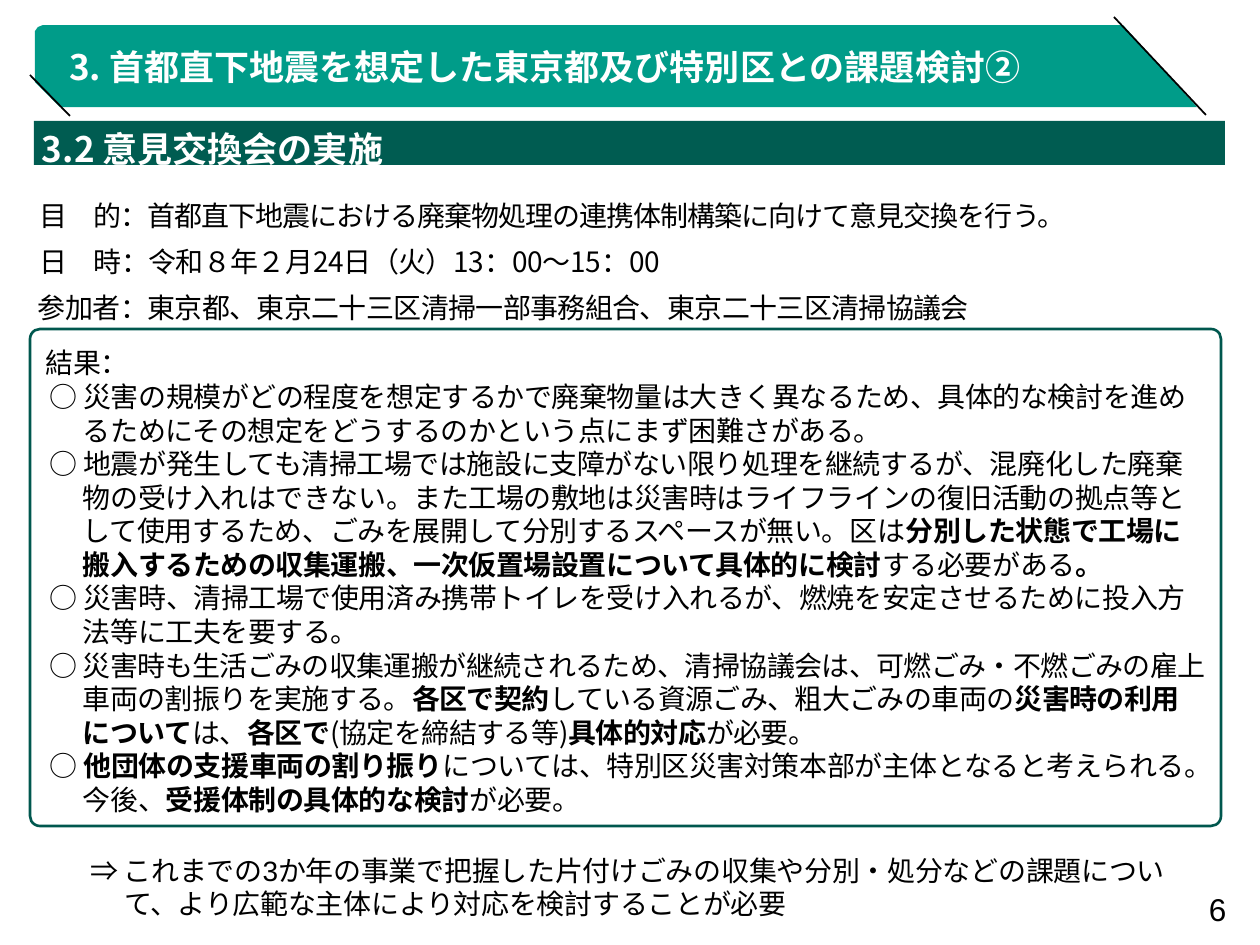
from lxml.etree import SubElement
from pptx import Presentation
from pptx.dml.color import RGBColor
from pptx.enum.shapes import MSO_CONNECTOR, MSO_SHAPE
from pptx.enum.text import MSO_ANCHOR, MSO_AUTO_SIZE, PP_ALIGN
from pptx.oxml.ns import qn
from pptx.util import Pt

HUE = {name: RGBColor.from_string(code) for name, code in {
    "teal": "009C89", "dark": "005C51", "edge": "00574E",
    "black": "000000", "white": "FFFFFF"}.items()}
CJK = "Noto Sans CJK JP"


def px(n):
    return round(n * 914400 / 126)


def write(shape, rows, pads, size=16, hue="black", face=CJK, bold=False,
          anchor=MSO_ANCHOR.TOP, lead=Pt(19.2), gap=0):
    """Fill a shape with rows of (text, margin, indent, tracking); | toggles bold."""
    frame = shape.text_frame
    frame.word_wrap = True
    frame.auto_size = MSO_AUTO_SIZE.NONE
    frame.vertical_anchor = anchor
    frame.margin_left, frame.margin_top, frame.margin_right = map(px, pads)
    frame.margin_bottom = 0
    for i, (text, left, hang, track) in enumerate(rows):
        para = frame.add_paragraph() if i else frame.paragraphs[0]
        para.alignment = PP_ALIGN.LEFT
        para.line_spacing = lead
        para.space_before = Pt(gap if i else 0)
        props = para._p.get_or_add_pPr()
        props.set("marL", str(px(left)))
        props.set("indent", str(px(hang)))
        for j, part in enumerate(text.split("|")):
            if not part:
                continue
            run = para.add_run()
            run.text = part
            font = run.font
            font.size = Pt(size)
            font.bold = bold or j % 2 == 1
            font.color.rgb = HUE[hue]
            font.name = face
            mark = run._r.get_or_add_rPr()
            mark.set("spc", str(track))
            SubElement(mark, qn("a:ea")).set("typeface", CJK)


deck = Presentation()
deck.slide_width, deck.slide_height = px(1260), px(945)
slide = deck.slides.add_slide(deck.slide_layouts[5])
shapes = slide.shapes
title = shapes.title

# Header band with two slanted lines
pen = shapes.build_freeform(60, 107, scale=px(1))
pen.add_line_segments([(35, 82), (35, 31), (38, 27), (43, 25),
                       (1123, 25), (1197, 107)])
band = pen.convert_to_shape()
band.shadow.inherit = False
band.fill.solid()
band.fill.fore_color.rgb = HUE["teal"]
band.line.fill.background()

for ends in [(1114, 17, 1206, 115), (30, 75, 70, 116)]:
    slash = shapes.add_connector(MSO_CONNECTOR.STRAIGHT, *map(px, ends))
    slash.line.color.rgb = HUE["black"]
    slash.line.width = Pt(1)
    SubElement(slash._element.spPr, qn("a:effectLst"))

# Title, moved in front of the band
title.left, title.top, title.width, title.height = map(px, (34, 26, 1079, 81))
shapes._spTree.append(title._element)
write(title, [("3. 首都直下地震を想定した東京都及び特別区との課題検討②", 0, 0, 0)],
      (35, 5, 0), size=20, hue="white", bold=True,
      anchor=MSO_ANCHOR.MIDDLE, lead=0.9)

# Section bar
bar = shapes.add_shape(MSO_SHAPE.RECTANGLE, *map(px, (34, 121, 1191, 44)))
bar.shadow.inherit = False
bar.fill.solid()
bar.fill.fore_color.rgb = HUE["dark"]
bar.line.fill.background()
write(bar, [("3.2 意見交換会の実施", 0, 0, 0)], (8, 10, 0), size=20,
      hue="white", bold=True, anchor=MSO_ANCHOR.MIDDLE, lead=1.0)

# Meeting facts
facts = shapes.add_textbox(*map(px, (38, 184, 1191, 140)))
write(facts, [
    ("目　的：首都直下地震における廃棄物処理の連携体制構築に向けて意見交換を行う。",
     111, -110, -50),
    ("日　時：令和８年２月24日（火）13：00～15：00", 111, -110, -30),
    ("参加者：東京都、東京二十三区清掃一部事務組合、東京二十三区清掃協議会",
     136, -136, -30),
], (0, 15, 0), gap=7)

# Results
box = shapes.add_shape(MSO_SHAPE.ROUNDED_RECTANGLE,
                       *map(px, (30, 329, 1191, 497)))
box.adjustments[0] = 0.02
box.shadow.inherit = False
box.fill.background()
box.line.color.rgb = HUE["edge"]
box.line.width = Pt(1.5)
notes = [
    ("災害の規模がどの程度を想定するかで廃棄物量は大きく異なるため、具体的な検討を"
     "進めるためにその想定をどうするのかという点にまず困難さがある。", -20),
    ("地震が発生しても清掃工場では施設に支障がない限り処理を継続するが、混廃化した"
     "廃棄物の受け入れはできない。また工場の敷地は災害時はライフラインの復旧活動の"
     "拠点等として使用するため、ごみを展開して分別するスペースが無い。区は"
     "|分別した状態で工場に搬入するための収集運搬、一次仮置場設置について"
     "具体的に検討|する必要がある|。", -20),
    ("災害時、清掃工場で使用済み携帯トイレを受け入れるが、燃焼を安定させるために"
     "投入方法等に工夫を要する。", -20),
    ("災害時も生活ごみの収集運搬が継続されるため、清掃協議会は、可燃ごみ・不燃ごみの"
     "雇上車両の割振りを実施する。|各区で契約|している資源ごみ、粗大ごみの車両の"
     "|災害時の利用について|は、|各区で|(協定を締結する等)|具体的対応|が必要。", -30),
    ("|他団体の支援車両の割り振り|については、特別区災害対策本部が主体となると"
     "考えられる。今後、|受援体制の具体的な検討|が必要。", -20),
]
write(box, [("結果：", 1, 0, -30)]
      + [("○ " + text, 38, -33, track) for text, track in notes], (12, 14, 12))

# Conclusion and page number
close = shapes.add_textbox(*map(px, (62, 849, 1129, 69)))
write(close, [("⇒ これまでの3か年の事業で把握した片付けごみの収集や分別・処分などの課題に"
               "ついて、より広範な主体により対応を検討することが必要", 62, -34, -10)],
      (0, 4, 0), face="Arial")

page = shapes.add_textbox(*map(px, (1196, 883, 43, 45)))
write(page, [("6", 0, 0, 0)], (0, 0, 0), size=18, face="Arial",
      anchor=MSO_ANCHOR.BOTTOM, lead=1.0)
page.text_frame.word_wrap = False
page.text_frame.paragraphs[0].alignment = PP_ALIGN.CENTER

deck.save("out.pptx")
